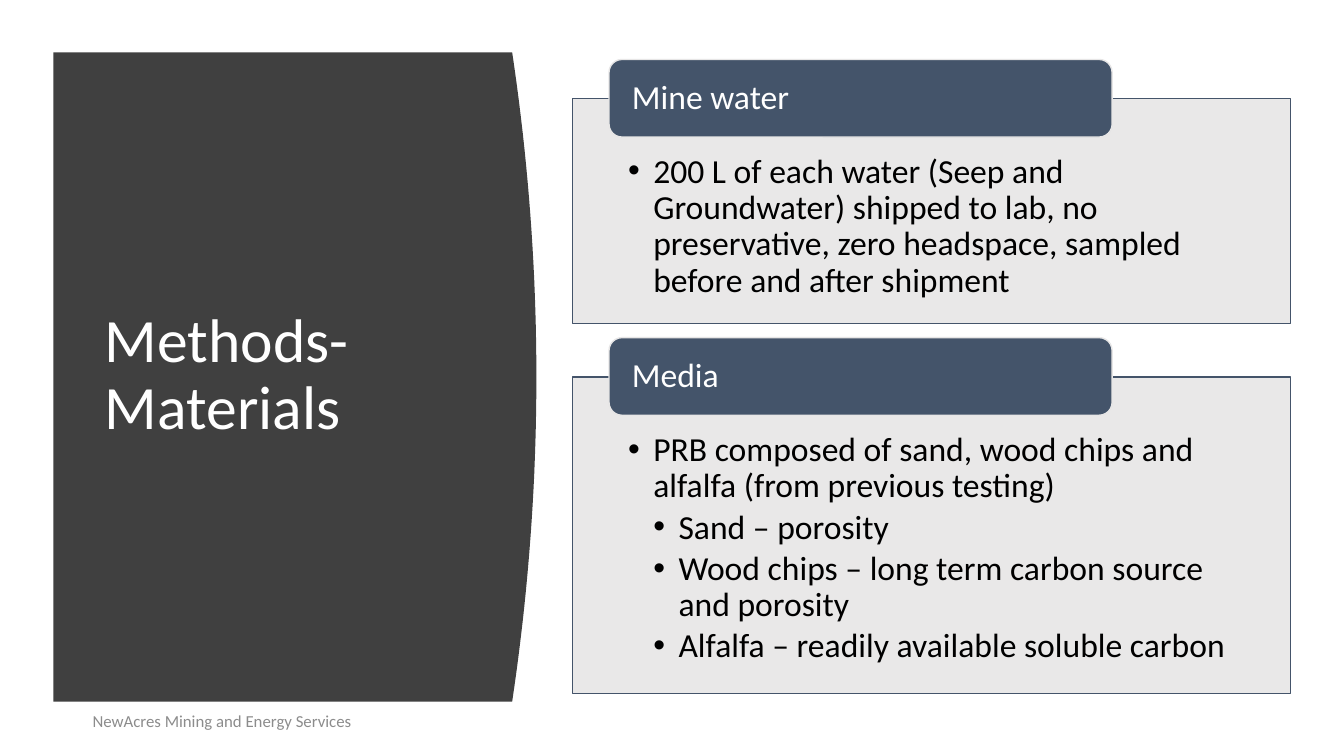
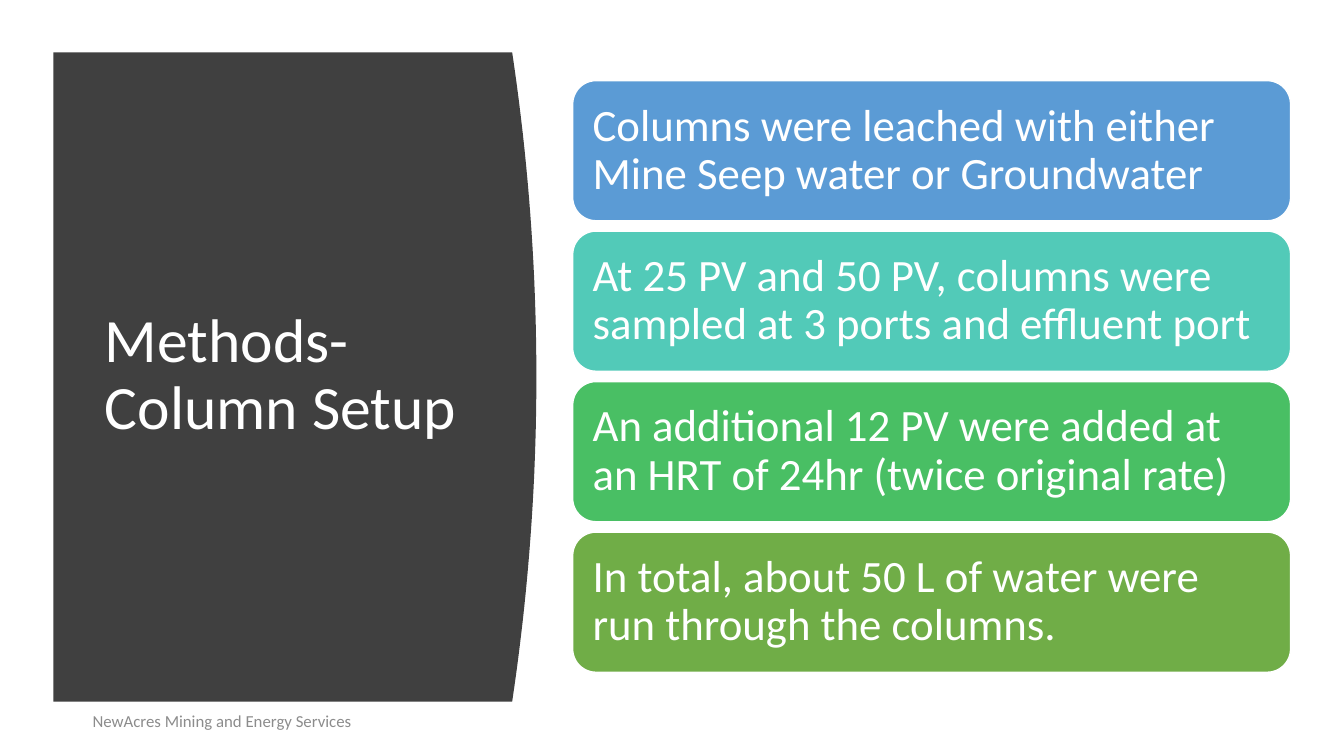
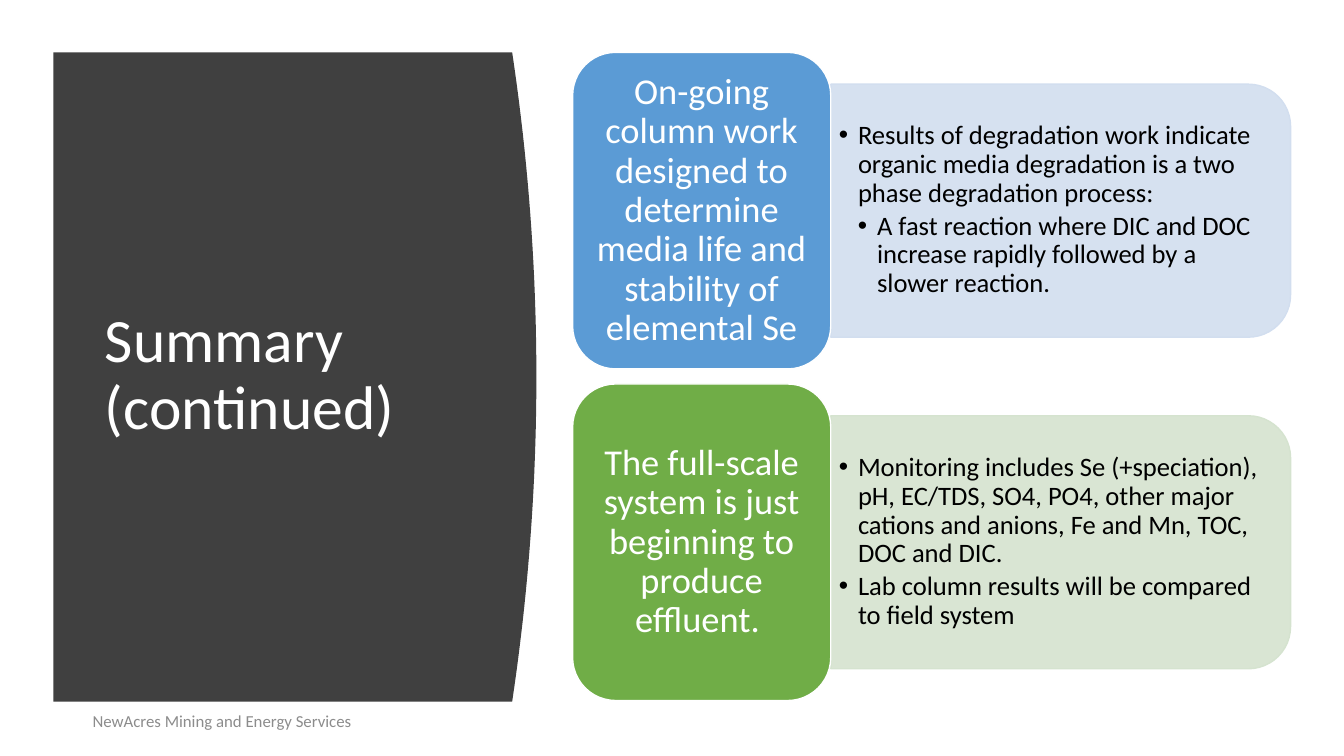
from lxml.etree import SubElement
from pptx import Presentation
from pptx.dml.color import RGBColor
from pptx.enum.shapes import MSO_SHAPE as Preset
from pptx.enum.text import MSO_ANCHOR as Anchor, MSO_AUTO_SIZE as AutoSize, PP_ALIGN as Align
from pptx.oxml.ns import qn
from pptx.util import Inches, Pt

WHITE = RGBColor(0xFF, 0xFF, 0xFF)
BLACK = RGBColor(0x00, 0x00, 0x00)
CHARCOAL = RGBColor(0x40, 0x40, 0x40)
FOOTER_GRAY = RGBColor(0x8C, 0x8C, 0x8C)
SLATE = RGBColor(0x44, 0x54, 0x6A)
PALE_GRAY = RGBColor(0xE7, 0xE6, 0xE6)
BLUE = RGBColor(0x5B, 0x9B, 0xD5)
TEAL = RGBColor(0x52, 0xCA, 0xB8)
EMERALD = RGBColor(0x49, 0xBF, 0x64)
GREEN = RGBColor(0x70, 0xAD, 0x47)
PALE_BLUE = RGBColor(0xD2, 0xDE, 0xEF)
PALE_GREEN = RGBColor(0xD5, 0xE3, 0xCF)

FONT = "Calibri"
FOOTER = "NewAcres Mining and Energy Services"
CONTENT_LEFT, CONTENT_WIDTH = 5.68, 7.12
PANEL_LEFT, PANEL_RIGHT, PANEL_TOP, PANEL_BOTTOM = 0.53, 5.08, 0.52, 6.96
PANEL_BULGE, PANEL_STEPS = 0.24, 40

MATERIALS = [
    ("Mine water", 2.23, [
        (1, "200 L of each water (Seep and Groundwater) shipped to lab, no preservative, "
            "zero headspace, sampled before and after shipment"),
    ]),
    ("Media", 3.14, [
        (1, "PRB composed of sand, wood chips and alfalfa (from previous testing)"),
        (2, "Sand – porosity"),
        (2, "Wood chips – long term carbon source and porosity"),
        (2, "Alfalfa – readily available soluble carbon"),
    ]),
]
SETUP_STEPS = [
    ("Columns were leached with either Mine Seep water or Groundwater", BLUE),
    ("At 25 PV and 50 PV, columns were sampled at 3 ports and effluent port", TEAL),
    ("An additional 12 PV were added at an HRT of 24hr (twice original rate)", EMERALD),
    ("In total, about 50 L of water were run through the columns.", GREEN),
]
SUMMARY = [
    ("On-going column work designed to determine media life and stability of elemental Se",
     BLUE, PALE_BLUE, [
         (1, "Results of degradation work indicate organic media degradation is a two phase "
             "degradation process:"),
         (2, "A fast reaction where DIC and DOC increase rapidly followed by a slower reaction."),
     ]),
    ("The full-scale system is just beginning to produce effluent. ",
     GREEN, PALE_GREEN, [
         (1, "Monitoring includes Se (+speciation), pH, EC/TDS, SO4, PO4, other major cations "
             "and anions, Fe and Mn, TOC, DOC and DIC."),
         (1, "Lab column results will be compared to field system"),
     ]),
]


def inches(*lengths):
    return [Inches(length) for length in lengths]


def write(shape, items, size, color, insets=(0.1, 0.05, 0.1, 0.05), anchor=Anchor.MIDDLE,
          align=Align.LEFT, indent=0, line_spacing=0.9):
    frame = shape.text_frame
    frame.word_wrap = True
    frame.auto_size = AutoSize.NONE
    frame.vertical_anchor = anchor
    (frame.margin_left, frame.margin_top,
     frame.margin_right, frame.margin_bottom) = inches(*insets)
    for index, (level, text) in enumerate(items):
        paragraph = frame.add_paragraph() if index else frame.paragraphs[0]
        paragraph.text = text
        if level:
            properties = paragraph._p.get_or_add_pPr()
            properties.set("marL", str(Inches(indent * level)))
            properties.set("indent", str(-Inches(indent)))
            SubElement(properties, qn("a:buFont"), typeface="Arial")
            SubElement(properties, qn("a:buChar"), char="•")
            paragraph.space_after = Pt(size * 0.15)
        paragraph.alignment = align
        paragraph.line_spacing = line_spacing
        font = paragraph.font
        font.name, font.size = FONT, Pt(size)
        font.color.rgb = color


def add_block(slide, preset, box, fill, line, alpha=None):
    shape = slide.shapes.add_shape(preset, *inches(*box))
    shape.shadow.inherit = False
    shape.fill.solid()
    shape.fill.fore_color.rgb = fill
    if alpha:
        color = shape.element.spPr.find(qn("a:solidFill")).find(qn("a:srgbClr"))
        SubElement(color, qn("a:alpha"), val=str(alpha * 1000))
    shape.line.color.rgb = line
    shape.line.width = Pt(1)
    return shape


def add_panel(slide):
    middle = (PANEL_TOP + PANEL_BOTTOM) / 2
    half = (PANEL_BOTTOM - PANEL_TOP) / 2
    curve = []
    for step in range(PANEL_STEPS + 1):
        offset = 2 * step / PANEL_STEPS - 1
        curve.append((PANEL_RIGHT + PANEL_BULGE * (1 - offset ** 2), middle + half * offset))
    outline = [inches(*point) for point in curve + [(PANEL_LEFT, PANEL_BOTTOM)]]
    builder = slide.shapes.build_freeform(*inches(PANEL_LEFT, PANEL_TOP))
    builder.add_line_segments(outline, close=True)
    panel = builder.convert_to_shape()
    panel.shadow.inherit = False
    panel.fill.solid()
    panel.fill.fore_color.rgb = CHARCOAL
    panel.line.fill.background()
    slide.shapes.element.insert(2, panel.element)


def add_framed_slide(presentation, title_text):
    slide = presentation.slides.add_slide(presentation.slide_layouts[5])
    add_panel(slide)
    title = slide.shapes.title
    title.left, title.top, title.width, title.height = inches(0.94, 1.11, 3.74, 5.24)
    write(title, [(0, title_text)], 44, WHITE)
    footer = slide.shapes.add_textbox(*inches(0.82, 6.95, 4.5, 0.4))
    write(footer, [(0, FOOTER)], 12, FOOTER_GRAY, line_spacing=1.0)
    return slide


def build_materials(presentation):
    slide = add_framed_slide(presentation, "Methods- Materials")
    top, gap = 0.98, 0.53
    for heading, height, bullets in MATERIALS:
        card = add_block(slide, Preset.RECTANGLE, (CONTENT_LEFT, top, CONTENT_WIDTH, height),
                         PALE_GRAY, SLATE, alpha=90)
        write(card, bullets, 24, BLACK, (0.55, 0.55, 0.55, 0.19), Anchor.TOP, indent=0.25)
        tab = add_block(slide, Preset.ROUNDED_RECTANGLE,
                        (CONTENT_LEFT + 0.36, top - 0.39, 4.99, 0.77), SLATE, PALE_GRAY)
        write(tab, [(0, heading)], 24, WHITE, (0.19, 0, 0.19, 0))
        top += height + gap


def build_column_setup(presentation):
    slide = add_framed_slide(presentation, "Methods-Column Setup")
    top, height, pitch = 0.8, 1.39, 1.493
    for index, (text, color) in enumerate(SETUP_STEPS):
        box = (CONTENT_LEFT, top + index * pitch, CONTENT_WIDTH, height)
        step = add_block(slide, Preset.ROUNDED_RECTANGLE, box, color, WHITE)
        write(step, [(0, text)], 32, WHITE, (0.13,) * 4)


def build_summary(presentation):
    slide = add_framed_slide(presentation, "Summary (continued)")
    top, height, pitch, lead_width, detail_height = 0.52, 3.14, 3.29, 2.56, 2.51
    detail_left = CONTENT_LEFT + lead_width
    detail_width = CONTENT_WIDTH - lead_width
    for index, (lead_text, color, pale_color, bullets) in enumerate(SUMMARY):
        row_top = top + index * pitch
        middle = row_top + height / 2
        detail = add_block(slide, Preset.ROUND_2_SAME_RECTANGLE,
                           (detail_left + (detail_width - detail_height) / 2,
                            middle - detail_width / 2, detail_height, detail_width),
                           pale_color, pale_color, alpha=90)
        detail.rotation = 90
        caption = slide.shapes.add_textbox(*inches(detail_left, middle - 1.14, 4.44, 2.27))
        write(caption, bullets, 19, BLACK, (0.08, 0.04, 0.08, 0.04), indent=0.19)
        lead = add_block(slide, Preset.ROUNDED_RECTANGLE,
                         (CONTENT_LEFT, row_top, lead_width, height), color, WHITE)
        write(lead, [(0, lead_text)], 26, WHITE, (0.11, 0.05, 0.11, 0.05), align=Align.CENTER)


def main():
    presentation = Presentation()
    presentation.slide_width, presentation.slide_height = inches(13.33, 7.5)
    build_materials(presentation)
    build_column_setup(presentation)
    build_summary(presentation)
    presentation.save("out.pptx")


if __name__ == "__main__":
    main()
